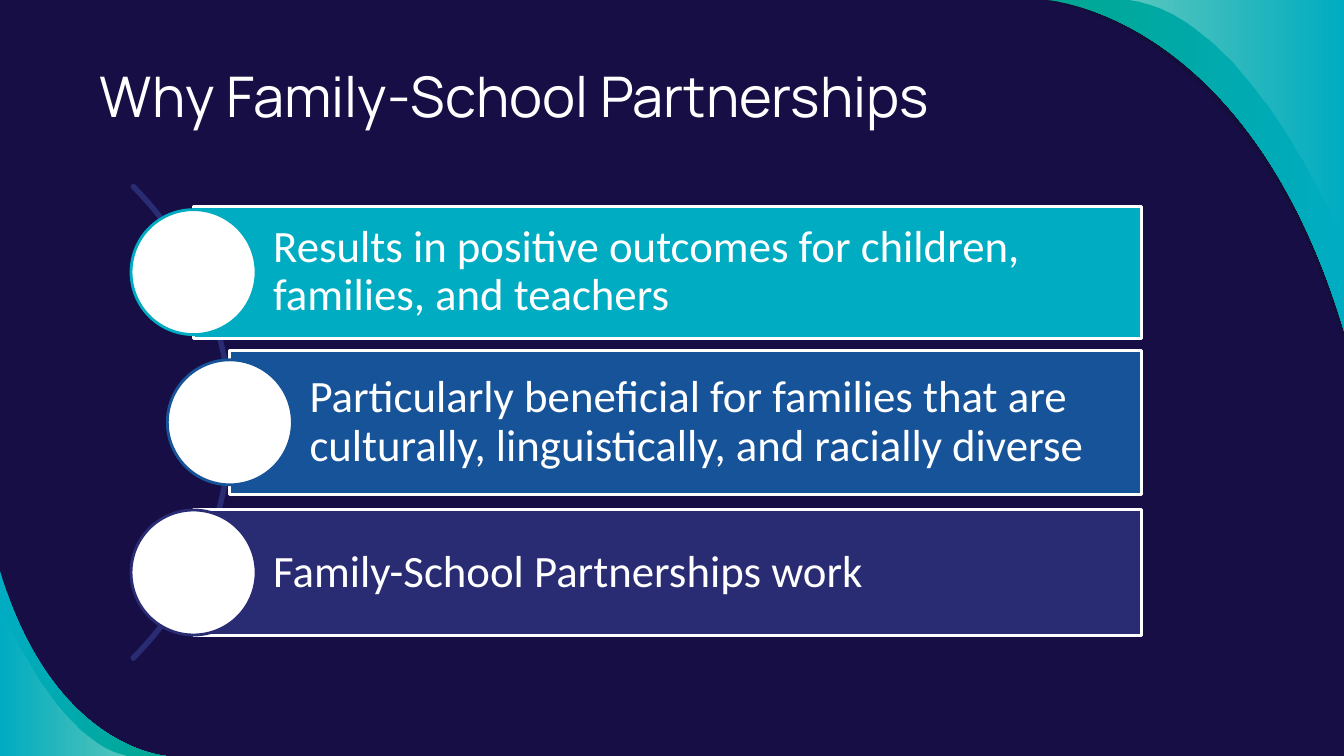
from lxml.etree import SubElement
from pptx import Presentation
from pptx.dml.color import RGBColor
from pptx.enum.shapes import MSO_SHAPE
from pptx.enum.text import MSO_ANCHOR, PP_ALIGN
from pptx.oxml.ns import qn
from pptx.util import Inches, Pt

WIDTH, HEIGHT = 13.33, 7.5
WHITE, TEAL, GREEN, BLUE, INDIGO = "FFFFFF", "00ACC2", "00A791", "175398", "292C73"
SHADOW_CURVE = [(3.03, 0), (3.03, 0), (0.98, 0.11), (0, 3.37)]
BAND_CURVE = [(2.95, 0), (2.95, 0), (0.95, 0.11), (0, 3.28)]
GLOW_CURVE = [(2.15, 0), (0.91, 0.15), (0, 2.44), (0, 2.44)]
BAND_STOPS = [(TEAL, 100), (GREEN, 100)]
GLOW_STOPS = [(WHITE, 0), (WHITE, 36)]
REASONS = [
    ("Results in positive outcomes for children, families, and teachers", TEAL, 0, 1.31),
    ("Particularly beneficial for families that are culturally, linguistically, "
     "and racially diverse", BLUE, 0.36, 1.43),
    ("Family-School Partnerships work", INDIGO, 0, 1.25),
]


def color(value):
    """Return the colour for a hex string."""
    return RGBColor.from_string(value)


def apply_format(target, values):
    """Set each attribute of target from a dict."""
    for name, value in values.items():
        setattr(target, name, value)


def set_alpha(shape, percents):
    """Set the opacity of the fill colours of a shape, in order."""
    for element, percent in zip(shape._element.spPr.iter(qn("a:srgbClr")), percents):
        if percent < 100:
            SubElement(element, qn("a:alpha")).set("val", str(percent * 1000))


def bend_outline(shape):
    """Turn the first three line segments of a freeform into one cubic curve."""
    segments = list(shape._element.spPr.iter(qn("a:lnTo")))[:3]
    curve = SubElement(segments[0].getparent(), qn("a:cubicBezTo"))
    segments[0].addprevious(curve)
    for segment in segments:
        curve.append(segment[0])
        segment.getparent().remove(segment)


def add_wave(slide, corner, curve, scale, stops):
    """Fill the area between a slide corner and a cubic curve scaled from it."""
    side = 1 if corner[0] == 0 else -1
    points = [(Inches(corner[0] + side * scale * x), Inches(corner[1] - side * scale * y))
              for x, y in curve]
    builder = slide.shapes.build_freeform(*points[0], scale=1.0)
    builder.add_line_segments(points[1:] + [tuple(map(Inches, corner))], close=True)
    shape = builder.convert_to_shape()
    bend_outline(shape)
    shape.shadow.inherit = False
    shape.line.fill.background()
    ordered = stops[::side]
    if len(stops) == 1:
        shape.fill.solid()
        shape.fill.fore_color.rgb = color(stops[0][0])
    else:
        shape.fill.gradient()
        shape.fill.gradient_angle = 0
        for position, (stop, (value, _)) in enumerate(zip(shape.fill.gradient_stops, ordered)):
            stop.position = position
            stop.color.rgb = color(value)
    set_alpha(shape, [percent for _, percent in ordered])


def add_corners(slide):
    """Draw the waves in the top right and bottom left corners."""
    top, bottom = (WIDTH, 0), (0, HEIGHT)
    add_wave(slide, top, SHADOW_CURVE, 1, [("12102F", 54)])
    for corner, band_scale, glow_scale in [(top, 1, 1), (bottom, 0.56, 0.61)]:
        add_wave(slide, corner, BAND_CURVE, band_scale, BAND_STOPS)
        add_wave(slide, corner, GLOW_CURVE, glow_scale, GLOW_STOPS)


def write_text(shape, text, font_name, size, insets):
    """Write one left-aligned white paragraph, centred vertically."""
    frame = shape.text_frame
    frame.text = text
    sides = ("margin_left", "margin_top", "margin_right", "margin_bottom")
    apply_format(frame, dict(zip(sides, map(Inches, insets))))
    apply_format(frame, {"word_wrap": True, "vertical_anchor": MSO_ANCHOR.MIDDLE})
    paragraph = frame.paragraphs[0]
    apply_format(paragraph, {"alignment": PP_ALIGN.LEFT, "line_spacing": 0.9})
    font = paragraph.runs[0].font
    apply_format(font, {"name": font_name, "size": Pt(size), "bold": False})
    font.color.rgb = color(WHITE)


def add_title(slide, left, top, width, height):
    """Place and fill the title placeholder."""
    title = slide.shapes.title
    apply_format(title, {"left": Inches(left), "top": Inches(top),
                         "width": Inches(width), "height": Inches(height)})
    insets = (0.1, 0.12, 0.1, 0.08)
    write_text(title, "Why Family-School Partnerships", "Manrope", 40, insets)


def add_preset(slide, kind, box, fill, line):
    """Add a preset shape with a two-point outline."""
    shape = slide.shapes.add_shape(kind, *map(Inches, box))
    shape.shadow.inherit = False
    if fill:
        shape.fill.solid()
        shape.fill.fore_color.rgb = color(fill)
    else:
        shape.fill.background()
    shape.line.color.rgb = color(line)
    shape.line.width = Pt(2)
    return shape


def add_reasons(slide, left, top, width, height):
    """Draw the arc, then evenly spaced bars with a circle on each left edge."""
    arc_size, circle, pitch = 6.66, 1.24, 1.49
    middle = top + height / 2
    arc_box = (left - 5.66, middle - arc_size / 2, arc_size, arc_size)
    arc = add_preset(slide, MSO_SHAPE.BLOCK_ARC, arc_box, None, INDIGO)
    for index, value in enumerate((189, 27, 0.004)):
        arc.adjustments[index] = value
    for index, (text, fill, indent, bar_height) in enumerate(REASONS):
        center = middle + (index - 1) * pitch
        bar_left = left + circle / 2 + indent
        bar_box = (bar_left, center - bar_height / 2, left + width - bar_left, bar_height)
        bar = add_preset(slide, MSO_SHAPE.RECTANGLE, bar_box, fill, WHITE)
        write_text(bar, text, "Calibri", 32, (0.79, 0.09, 0.09, 0.09))
        circle_box = (left + indent, center - circle / 2, circle, circle)
        add_preset(slide, MSO_SHAPE.OVAL, circle_box, WHITE, fill)


def main():
    """Build and save the slide."""
    presentation = Presentation()
    apply_format(presentation, {"slide_width": Inches(WIDTH), "slide_height": Inches(HEIGHT)})
    slide = presentation.slides.add_slide(presentation.slide_layouts[5])
    slide.background.fill.solid()
    slide.background.fill.fore_color.rgb = color("160E44")
    add_corners(slide)
    add_title(slide, 0.89, 0.51, 10.26, 0.92)
    add_reasons(slide, 1.3, 2.05, 10.02, 4.28)
    presentation.save("out.pptx")


if __name__ == "__main__":
    main()
